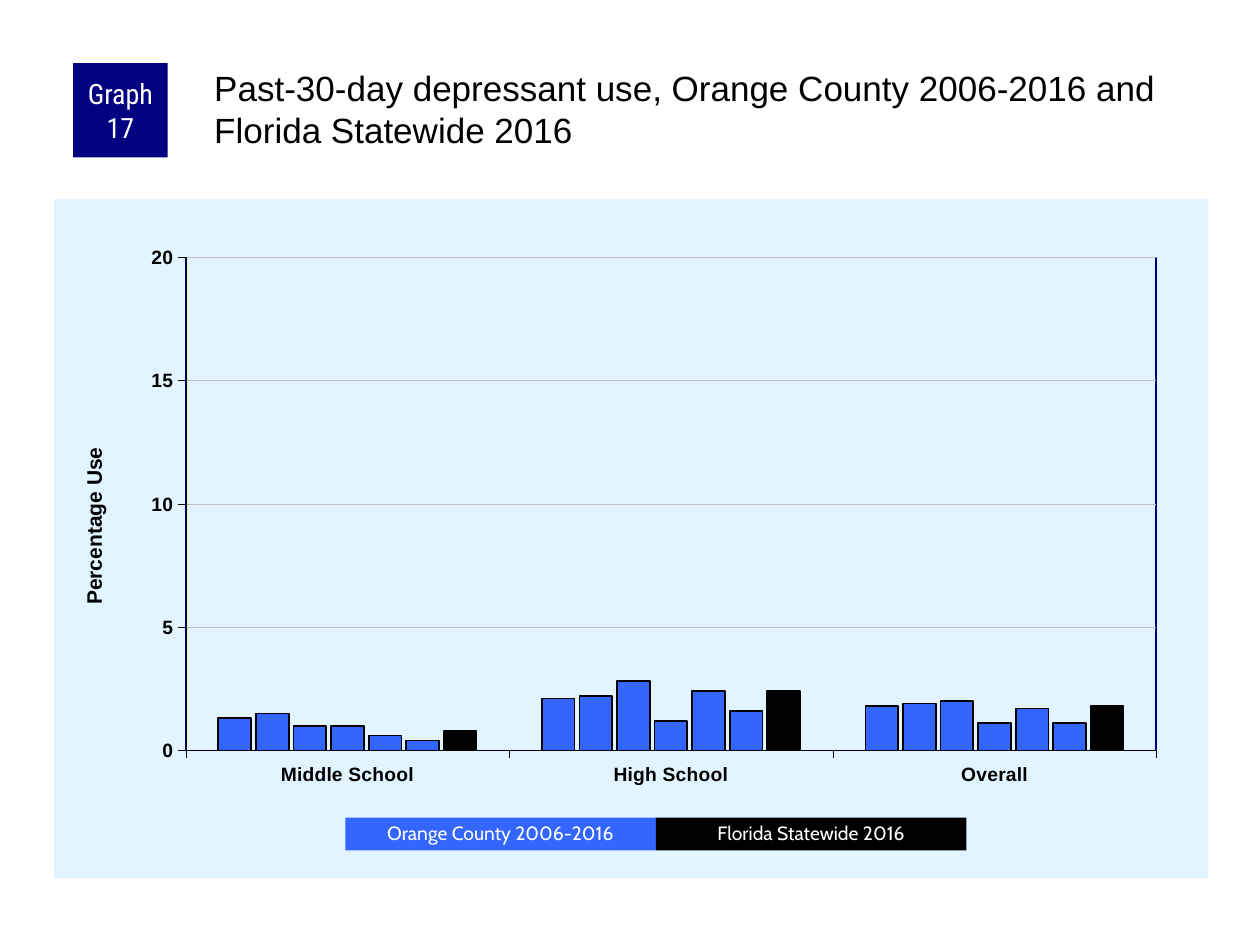
import pptx
import pptx.chart.data
import pptx.dml.color
import pptx.enum.chart
import pptx.enum.shapes
import pptx.enum.text
import pptx.oxml
import pptx.oxml.ns
import pptx.util

Inches = pptx.util.Inches
Pt = pptx.util.Pt
NAVY, BLUE, BLACK, WHITE = "000080", "3366FF", "000000", "FFFFFF"
PANEL, GRID = "E1F4FF", "C0C0C0"
GROUPS = ["Middle School", "High School", "Overall"]
COUNTY_USE = [
    (1.3, 2.1, 1.8), (1.5, 2.2, 1.9), (1, 2.8, 2),
    (1, 1.2, 1.1), (0.6, 2.4, 1.7), (0.4, 1.6, 1.1),
]
STATE_USE = (0.8, 2.4, 1.8)


def rgb(value):
    return pptx.dml.color.RGBColor.from_string(value)


def apply(target, values):
    for key, value in values.items():
        setattr(target, key, value)


def set_font(font, name, size, color, bold=False):
    apply(font, {"name": name, "size": Pt(size), "bold": bold})
    font.color.rgb = rgb(color)


def set_line(line, color, width):
    line.color.rgb = rgb(color)
    line.width = Pt(width)


def chart_xml(body):
    ns = pptx.oxml.ns.nsdecls("c", "a")
    return pptx.oxml.parse_xml(body.replace(">", f" {ns}>", 1))


def manual_layout(parent, position, **settings):
    for old in parent.findall(pptx.oxml.ns.qn("c:layout")):
        parent.remove(old)
    items = "".join(f'<c:{key} val="{value}"/>' for key, value in settings.items())
    layout = f"<c:layout><c:manualLayout>{items}</c:manualLayout></c:layout>"
    parent.insert(position, chart_xml(layout))


def write(frame, text, font, align=None, spacing=None):
    frame.word_wrap = True
    paragraph = frame.paragraphs[0]
    apply(paragraph, {"alignment": align, "line_spacing": spacing})
    run = paragraph.add_run()
    run.text = text
    set_font(run.font, *font)


def add_label(slide, box, text, fill, font, spacing=None, margins=None):
    label = slide.shapes.add_shape(
        pptx.enum.shapes.MSO_SHAPE.RECTANGLE, *map(Inches, box))
    label.shadow.inherit = False
    label.fill.solid()
    label.fill.fore_color.rgb = rgb(fill)
    label.line.fill.background()
    apply(label.text_frame, margins or {})
    label.text_frame.vertical_anchor = pptx.enum.text.MSO_ANCHOR.MIDDLE
    write(label.text_frame, text, font, pptx.enum.text.PP_ALIGN.CENTER, spacing)


def add_heading(slide, left, top, width):
    add_label(slide, (left, top, 0.75, 0.75), "Graph 17", NAVY,
              ("Roboto Condensed", 16, WHITE),
              margins={"margin_left": Inches(0.05), "margin_right": Inches(0.05),
                       "margin_top": 0, "margin_bottom": 0})
    title = slide.shapes.add_textbox(
        *map(Inches, (left + 1.09, top, width - 1.09, 0.83))).text_frame
    apply(title, {"margin_left": Inches(0.03), "margin_top": Inches(0.03),
                  "margin_right": 0, "margin_bottom": 0})
    write(title, "Past-30-day depressant use, Orange County 2006-2016 "
                 "and Florida Statewide 2016", ("Arial", 20, BLACK))


def format_axes(chart):
    for axis in (chart.category_axis, chart.value_axis):
        axis.major_tick_mark = pptx.enum.chart.XL_TICK_MARK.OUTSIDE
        set_font(axis.tick_labels.font, "Arial", 11, BLACK, True)
        set_line(axis.format.line, BLACK, 0.25)
    value_axis = chart.value_axis
    apply(value_axis, {"minimum_scale": 0, "maximum_scale": 20, "major_unit": 5,
                       "has_major_gridlines": True})
    set_line(value_axis.major_gridlines.format.line, GRID, 0.25)
    title = value_axis.axis_title
    title.text_frame.text = "Percentage Use"
    set_font(title.text_frame.paragraphs[0].runs[0].font, "Arial", 12, BLACK, True)
    title_xml = value_axis._element.find(pptx.oxml.ns.qn("c:title"))
    body = title_xml.xpath(".//a:bodyPr")[0]
    for key, value in {"rot": "-5400000", "vert": "horz"}.items():
        body.set(key, value)
    manual_layout(title_xml, 1, xMode="edge", yMode="edge", x=0.02, y=0.36)


def add_use_chart(slide, left, top, width, height):
    data = pptx.chart.data.CategoryChartData()
    data.categories = GROUPS
    for number, values in enumerate(COUNTY_USE + [STATE_USE], 1):
        data.add_series(f"Series {number}", values)
    chart = slide.shapes.add_chart(
        pptx.enum.chart.XL_CHART_TYPE.COLUMN_CLUSTERED,
        *map(Inches, (left, top, width, height)), data).chart
    apply(chart, {"has_legend": False, "has_title": False})
    set_font(chart.font, "Arial", 8, BLACK)
    plot = chart.plots[0]
    apply(plot, {"gap_width": 200, "overlap": -15, "vary_by_categories": False})
    for index, series in enumerate(plot.series):
        series.format.fill.solid()
        series.format.fill.fore_color.rgb = rgb(
            BLUE if index < len(COUNTY_USE) else BLACK)
        set_line(series.format.line, BLACK, 1)
    format_axes(chart)
    chart_element = chart._chartSpace.chart
    plot_area = chart_element.plotArea
    manual_layout(plot_area, 0, layoutTarget="inner", xMode="edge", yMode="edge",
                  x=0.114, y=0.086, w=0.841, h=0.726)
    plot_area.append(chart_xml(
        f'<c:spPr><a:noFill/><a:ln w="{Pt(1)}"><a:solidFill>'
        f'<a:srgbClr val="{NAVY}"/></a:solidFill></a:ln></c:spPr>'))
    chart_element.addnext(chart_xml(
        f'<c:spPr><a:solidFill><a:srgbClr val="{PANEL}"/></a:solidFill>'
        "<a:ln><a:noFill/></a:ln></c:spPr>"))


def add_key(slide, left, top, width, height):
    entries = [("Orange County 2006-2016", BLUE), ("Florida Statewide 2016", BLACK)]
    entry_width = width / len(entries)
    for index, (text, fill) in enumerate(entries):
        add_label(slide, (left + index * entry_width, top, entry_width, height),
                  text, fill, ("Cabin", 11, WHITE), spacing=0.9)


def main():
    deck = pptx.Presentation()
    apply(deck, {"slide_width": Inches(10), "slide_height": Inches(7.5)})
    slide = deck.slides.add_slide(deck.slide_layouts[6])
    add_use_chart(slide, 0.43, 1.58, 9.16, 5.39)
    add_heading(slide, 0.58, 0.5, 9.01)
    add_key(slide, 2.74, 6.49, 4.93, 0.26)
    deck.save("out.pptx")


if __name__ == "__main__":
    main()
